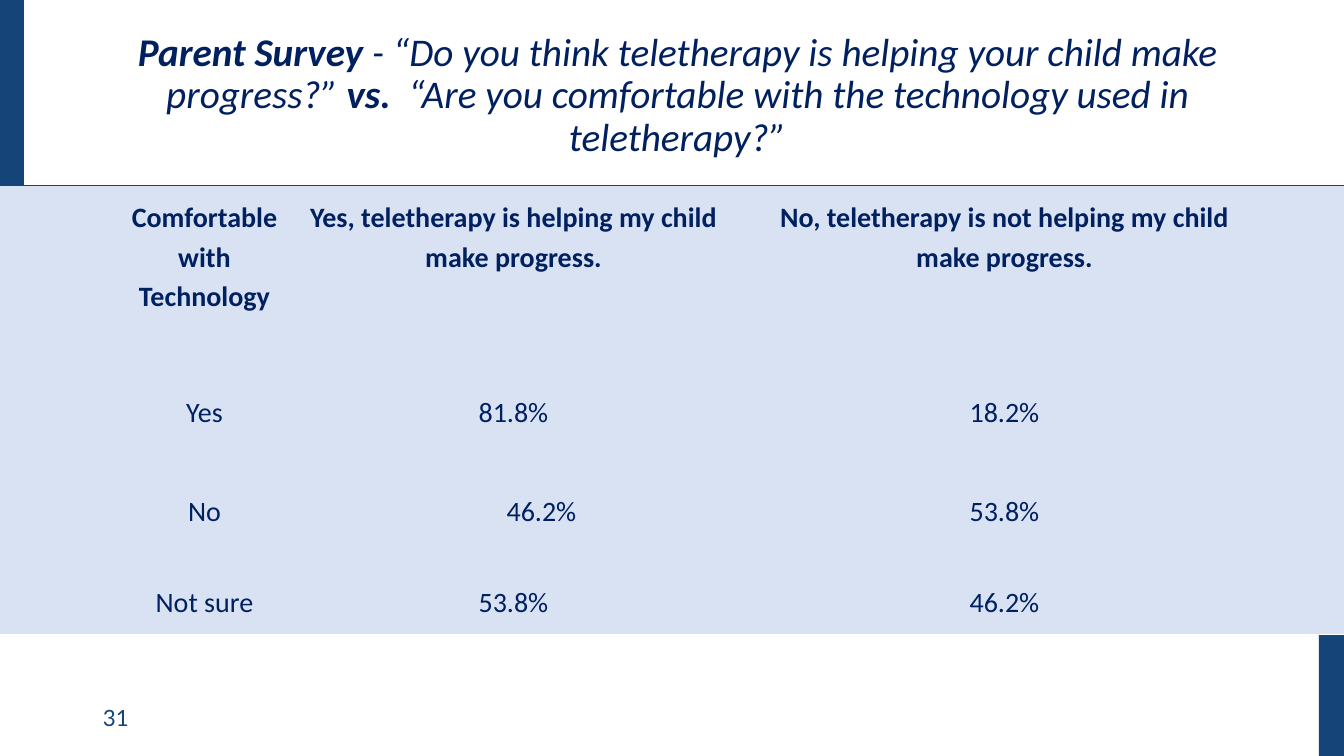
from lxml import etree
from pptx import Presentation, util as u
from pptx.dml.color import RGBColor
from pptx.enum import shapes, text
from pptx.oxml.ns import qn

NAVY = RGBColor(0x00, 0x20, 0x60)
BLUE = RGBColor(0x15, 0x45, 0x78)
PALE = RGBColor(0xD8, 0xE2, 0xF3)
PX = 914400 / 100.8


def px(length):
    return u.Emu(round(length * PX))


def style(run, size, color, font="Calibri", bold=False, italic=False):
    run.font.size = u.Pt(size)
    run.font.name = font
    run.font.bold = bold
    run.font.italic = italic
    run.font.color.rgb = color


deck = Presentation()
deck.slide_width, deck.slide_height = px(1344), px(756)
slide = deck.slides.add_slide(deck.slide_layouts[6])

# Background band and side bars
for left, top, width, height, color in [
    (-2, 186, 1346, 448, PALE),
    (-2, 0, 26, 186, BLUE),
    (1319, 635, 25, 121, BLUE),
]:
    block = slide.shapes.add_shape(
        shapes.MSO_SHAPE.RECTANGLE, px(left), px(top), px(width), px(height))
    block.shadow.inherit = False
    block.fill.solid()
    block.fill.fore_color.rgb = color
    block.line.fill.background()

rule = slide.shapes.add_connector(
    shapes.MSO_CONNECTOR.STRAIGHT, px(-2), px(186), px(1344), px(186))
rule.line.color.rgb = BLUE
rule.line.width = u.Pt(0.75)
etree.SubElement(rule._element.spPr, qn("a:effectLst"))

# Page number
page_number = slide.shapes.add_textbox(px(93), px(698), px(302), px(40)).text_frame
page_number.word_wrap = True
page_number.vertical_anchor = text.MSO_ANCHOR.MIDDLE
page_number.text = "31"
style(page_number.paragraphs[0].runs[0], 16, BLUE, font="Lato")

# Title
title = slide.shapes.add_textbox(px(98), px(23), px(1159), px(146)).text_frame
title.word_wrap = True
title.vertical_anchor = text.MSO_ANCHOR.MIDDLE
question = title.paragraphs[0]
question.alignment = text.PP_ALIGN.CENTER
question.line_spacing = 0.9
for words, bold in [
    ("Parent Survey", True),
    (" - “Do you think teletherapy is helping your child make progress?” ", False),
    ("vs. ", True),
    (" “Are you comfortable with the technology used in teletherapy?”", False),
]:
    run = question.add_run()
    run.text = words
    style(run, 28, NAVY, bold=bold, italic=True)

# Survey results
results = [
    ("Comfortable with Technology",
     "Yes, teletherapy is helping my child make progress.",
     "No, teletherapy is not helping my child make progress."),
    ("Yes", "81.8%", "18.2%"),
    ("No", "46.2%", "53.8%"),
    ("Not sure", "53.8%", "46.2%"),
]
column_widths = [167, 451, 531]
row_heights = [163, 91, 99, 91]
table = slide.shapes.add_table(
    len(results), len(column_widths), px(121), px(186),
    px(sum(column_widths)), px(sum(row_heights))).table
table.first_row = table.horz_banding = False
for column, width in zip(table.columns, column_widths):
    column.width = px(width)
for row, height in zip(table.rows, row_heights):
    row.height = px(height)

for r, answers in enumerate(results):
    for c, answer in enumerate(answers):
        cell = table.cell(r, c)
        cell.fill.background()
        cell.margin_left = cell.margin_right = u.Inches(0.1)
        cell.margin_top = cell.margin_bottom = u.Inches(0.1)
        cell.vertical_anchor = text.MSO_ANCHOR.BOTTOM if r else text.MSO_ANCHOR.TOP
        cell.text_frame.text = answer
        line = cell.text_frame.paragraphs[0]
        line.alignment = text.PP_ALIGN.CENTER
        line.line_spacing = 1.15
        style(line.runs[0], 20, NAVY, bold=r == 0)
        for side in ("a:lnL", "a:lnR", "a:lnT", "a:lnB"):
            border = etree.Element(qn(side), w="0")
            etree.SubElement(border, qn("a:noFill"))
            cell_fill = cell._tc.tcPr.find(qn("a:noFill"))
            cell_fill.addprevious(border)

# The comfort "No" share sits right of its column's centre
shifted_share = table.cell(2, 1).text_frame.paragraphs[0]
shifted_share._p.get_or_add_pPr().set("marL", str(px(56)))

deck.save("out.pptx")
